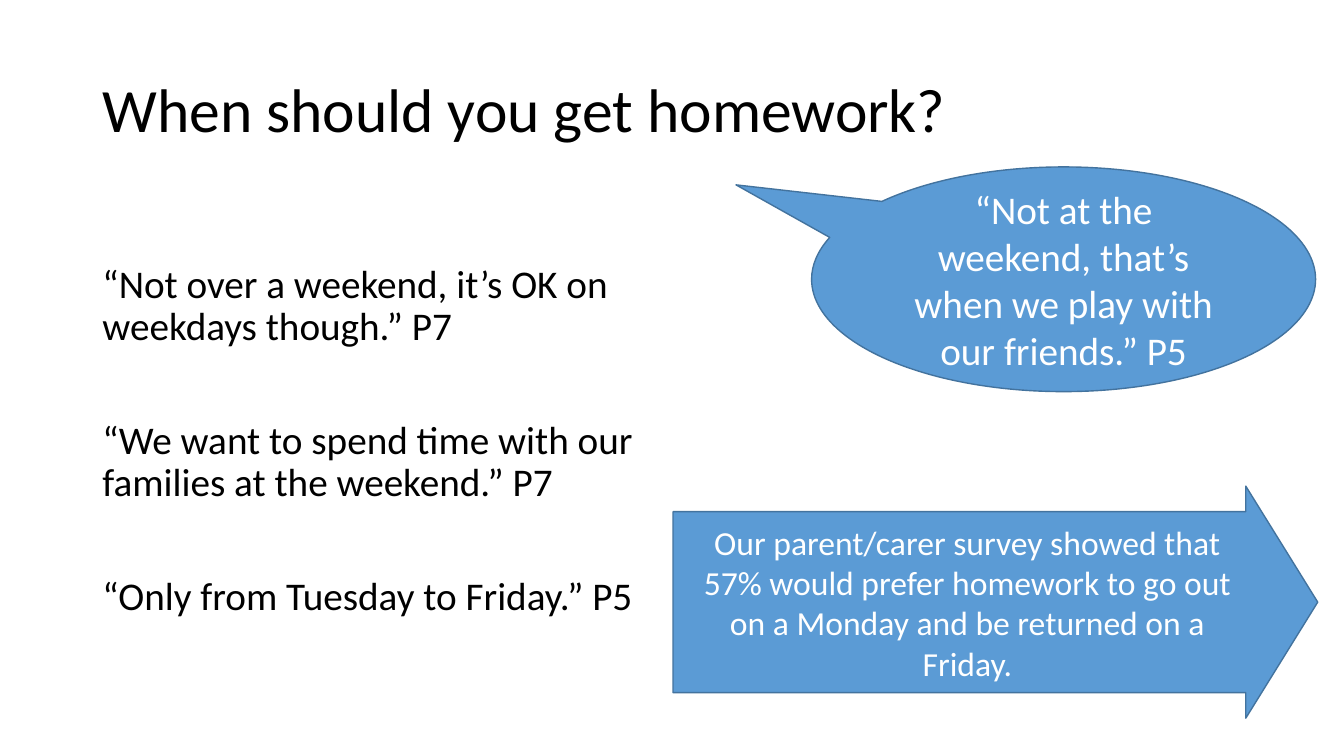
from lxml.etree import SubElement
from pptx import Presentation
from pptx.dml.color import RGBColor
from pptx.enum.shapes import MSO_SHAPE as Preset
from pptx.enum.text import MSO_ANCHOR as Anchor, MSO_AUTO_SIZE as AutoSize, PP_ALIGN as Align
from pptx.oxml.ns import qn
from pptx.util import Emu, Pt

PX = 9525
BLACK, WHITE, BLUE, DARK_BLUE = "000000", "FFFFFF", "5B9BD5", "43739E"

TITLE = "When should you get homework?"
QUOTES = [
    "“Not over a weekend, it’s OK on weekdays though.” P7",
    "“We want to spend time with our families at the weekend.” P7",
    "“Only from Tuesday to Friday.” P5",
]
CALLOUT = "“Not at the weekend, that’s when we play with our friends.” P5"
SURVEY = (
    "Our parent/carer survey showed that 57% would prefer homework to go out on "
    "a Monday and be returned on a Friday."
)


def px(length):
    return Emu(length * PX)


def color(value):
    return RGBColor.from_string(value)


def place(shape, box):
    shape.left, shape.top, shape.width, shape.height = map(px, box)


def format_paragraph(paragraph, size, font_color, alignment):
    paragraph.alignment = alignment
    paragraph.font.name = "Calibri"
    paragraph.font.size = Pt(size)
    paragraph.font.color.rgb = color(font_color)


def add_title(slide, box):
    title = slide.shapes.title
    place(title, box)
    frame = title.text_frame
    frame.text = TITLE
    frame.auto_size = AutoSize.NONE
    frame.vertical_anchor = Anchor.MIDDLE
    paragraph = frame.paragraphs[0]
    format_paragraph(paragraph, 44, BLACK, Align.LEFT)
    paragraph.line_spacing = 0.9


def add_quotes(slide, box):
    body = slide.placeholders[1]
    place(body, box)
    frame = body.text_frame
    frame.text = "\n".join(QUOTES)
    frame.auto_size = AutoSize.NONE
    frame.vertical_anchor = Anchor.TOP
    frame.margin_top = px(60)
    for index, paragraph in enumerate(frame.paragraphs):
        format_paragraph(paragraph, 28, BLACK, Align.LEFT)
        paragraph.line_spacing = 0.9
        paragraph.space_before = Pt(51 if index else 0)
        properties = paragraph._p.get_or_add_pPr()
        properties.set("marL", "0")
        properties.set("indent", "0")
        bullet = SubElement(properties, qn("a:buNone"))
        properties.find(qn("a:defRPr")).addprevious(bullet)


def add_blue_shape(slide, box, preset, adjustments, text, size):
    shape = slide.shapes.add_shape(preset, *map(px, box))
    for index, value in enumerate(adjustments):
        shape.adjustments[index] = value
    shape.shadow.inherit = False
    shape.fill.solid()
    shape.fill.fore_color.rgb = color(BLUE)
    shape.line.color.rgb = color(DARK_BLUE)
    shape.line.width = Pt(1)
    frame = shape.text_frame
    frame.text = text
    frame.word_wrap = True
    frame.vertical_anchor = Anchor.MIDDLE
    format_paragraph(frame.paragraphs[0], size, WHITE, Align.CENTER)


def main():
    presentation = Presentation()
    presentation.slide_width, presentation.slide_height = px(1280), px(720)
    slide = presentation.slides.add_slide(presentation.slide_layouts[1])
    add_title(slide, (88, 38, 1104, 139))
    add_quotes(slide, (88, 192, 544, 457))
    add_blue_shape(slide, (773, 159, 480, 214), Preset.OVAL_CALLOUT, (-0.65, -0.42), CALLOUT, 28)
    add_blue_shape(slide, (641, 463, 614, 221), Preset.RIGHT_ARROW, (0.78, 0.31), SURVEY, 24)
    presentation.save("out.pptx")


if __name__ == "__main__":
    main()
